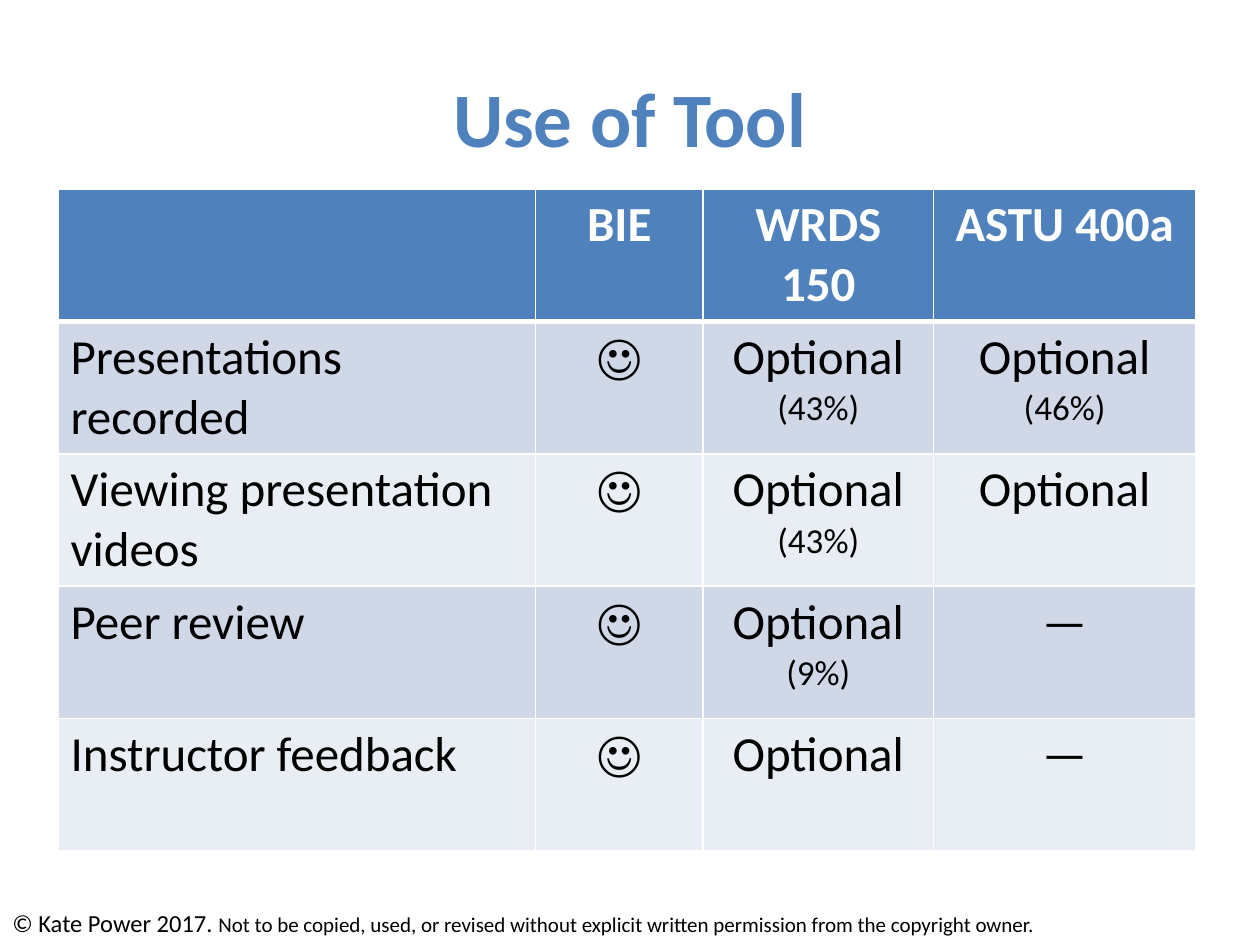
from dataclasses import dataclass

from lxml import etree
from pptx import Presentation
from pptx.dml.color import RGBColor
from pptx.enum.text import MSO_ANCHOR, MSO_AUTO_SIZE, PP_ALIGN
from pptx.oxml.ns import qn
from pptx.util import Inches, Pt

LEFT, CENTER = PP_ALIGN.LEFT, PP_ALIGN.CENTER
MIDDLE = MSO_ANCHOR.MIDDLE
GROW = MSO_AUTO_SIZE.SHAPE_TO_FIT_TEXT

COLORS = {
    "blue": "4F81BD",
    "dark": "D0D8E8",
    "light": "E9EDF4",
    "white": "FFFFFF",
    "black": "000000",
}
WIDTHS = [3.79, 1.33, 1.83, 2.08]
HEIGHT = 1.05


@dataclass
class Style:
    size: float
    color: str = "black"
    bold: bool = False


TITLE = Style(44, "blue", True)
HEAD = Style(28, "white", True)
BODY = Style(28)
SHARE = Style(20)
OWNER = Style(14)
TERMS = Style(12)

ROWS = [
    ["", "BIE", "WRDS 150", "ASTU 400a"],
    ["Presentations recorded", "☺", "Optional\n(43%)", "Optional\n(46%)"],
    ["Viewing presentation videos", "☺", "Optional\n(43%)", "Optional"],
    ["Peer review", "☺", "Optional\n(9%)", "—"],
    ["Instructor feedback", "☺", "Optional", "—"],
]


def add_run(para, text: str, style: Style) -> None:
    run = para.add_run()
    run.text = text
    form = {"name": "Calibri", "size": Pt(style.size), "bold": style.bold}
    for key, value in form.items():
        setattr(run.font, key, value)
    run.font.color.rgb = RGBColor.from_string(COLORS[style.color])


def add_edges(cell, base: float) -> None:
    props = cell._tc.get_or_add_tcPr()
    for side, width in {"L": 1, "R": 1, "T": 1, "B": base}.items():
        line = etree.SubElement(props, qn(f"a:ln{side}"), w=str(Pt(width)))
        fill = etree.SubElement(line, qn("a:solidFill"))
        etree.SubElement(fill, qn("a:srgbClr"), val=COLORS["white"])


def fill_cell(cell, text: str, row: int, col: int) -> None:
    add_edges(cell, 3 if row == 0 else 1)
    shade = "blue" if row == 0 else ("light", "dark")[row % 2]
    cell.fill.solid()
    cell.fill.fore_color.rgb = RGBColor.from_string(COLORS[shade])
    frame = cell.text_frame
    for num, part in enumerate(text.split("\n")):
        para = frame.add_paragraph() if num else frame.paragraphs[0]
        para.alignment = CENTER if col else LEFT
        if part:
            add_run(para, part, HEAD if row == 0 else SHARE if num else BODY)


def add_title(slide) -> None:
    title = slide.shapes.title
    place = {"left": 0.5, "top": 0.3, "width": 9, "height": 1.25}
    for key, value in place.items():
        setattr(title, key, Inches(value))
    title.text_frame.vertical_anchor = MIDDLE
    para = title.text_frame.paragraphs[0]
    para.alignment = CENTER
    add_run(para, "Use of Tool", TITLE)


def add_grid(slide) -> None:
    grid = slide.shapes.add_table(
        len(ROWS), len(WIDTHS), Inches(0.46), Inches(1.5),
        Inches(sum(WIDTHS)), Inches(HEIGHT * len(ROWS)),
    ).table
    for col, width in zip(grid.columns, WIDTHS):
        col.width = Inches(width)
    for row, texts in enumerate(ROWS):
        grid.rows[row].height = Inches(HEIGHT)
        for col, text in enumerate(texts):
            fill_cell(grid.cell(row, col), text, row, col)


def add_note(slide) -> None:
    box = slide.shapes.add_textbox(0, Inches(7.16), Inches(9.67), Inches(0.34))
    frame = box.text_frame
    frame.word_wrap = True
    frame.auto_size = GROW
    para = frame.paragraphs[0]
    add_run(para, "© Kate Power 2017. ", OWNER)
    add_run(
        para,
        "Not to be copied, used, or revised without explicit written "
        "permission from the copyright owner.",
        TERMS,
    )


def main() -> None:
    deck = Presentation()
    deck.slide_width, deck.slide_height = Inches(10), Inches(7.5)
    slide = deck.slides.add_slide(deck.slide_layouts[5])
    add_title(slide)
    add_grid(slide)
    add_note(slide)
    deck.save("out.pptx")


if __name__ == "__main__":
    main()
